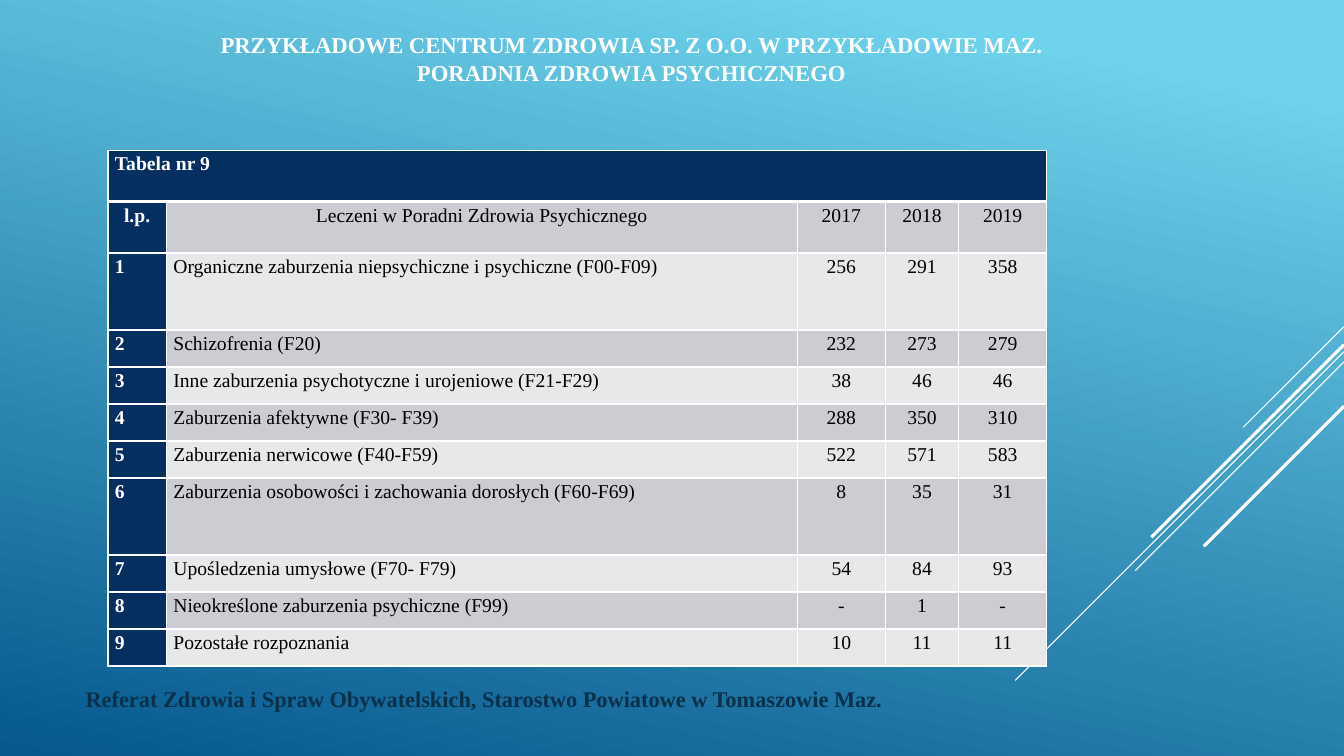
from dataclasses import dataclass
from itertools import product

from lxml import etree
from pptx import Presentation
from pptx import util as u
from pptx.dml.color import RGBColor
from pptx.enum import shapes, text
from pptx.oxml import ns

SLIDE_WIDTH = u.Inches(13.33)
SLIDE_HEIGHT = u.Inches(7.5)


@dataclass(frozen=True)
class Theme:
    font: str = "Times New Roman"
    sky: str = "6ED2EB"
    sea: str = "06588E"
    white: str = "FFFFFF"
    black: str = "000000"
    navy: str = "052F61"
    footer: str = "0A304A"
    dark_band: str = "CCCDD2"
    light_band: str = "E7E8EA"
    title_size: float = 16.2
    footer_size: float = 16
    table_size: float = 14
    border: float = 1
    header_border: float = 3


@dataclass(frozen=True)
class Ray:
    start: float
    run: float
    weight: float


@dataclass(frozen=True)
class Caption:
    wording: str
    left: float
    top: float
    width: float
    height: float
    margin_top: float
    size: float
    color: str
    align: text.PP_ALIGN


THEME = Theme()
LEFT, CENTER = text.PP_ALIGN.LEFT, text.PP_ALIGN.CENTER

RAYS = [
    Ray(43.2, 7.5, 0.75),
    Ray(46.53, 24.46, 0.75),
    Ray(47.87, 15.53, 0.75),
    Ray(45.6, 14.33, 2.25),
    Ray(53.73, 10.43, 2.25),
]

CAPTIONS = [
    Caption(
        "PRZYKŁADOWE CENTRUM ZDROWIA SP. Z O.O. W PRZYKŁADOWIE MAZ.\v"
        "PORADNIA ZDROWIA PSYCHICZNEGO",
        9.38, 3.73, 75.17, 15.07, 0.4, THEME.title_size, THEME.white, CENTER,
    ),
    Caption(
        "Referat Zdrowia i Spraw Obywatelskich, Starostwo Powiatowe w Tomaszowie Maz.",
        5.63, 90, 61.89, 5.33, 0.67, THEME.footer_size, THEME.footer, LEFT,
    ),
]

TABLE_LEFT, TABLE_TOP = 8.03, 19.87
COLUMN_WIDTHS = [4.35, 46.96, 6.53, 5.48, 6.53]
HEADER_ROW, TALL_ROW, PLAIN_ROW = 6.8, 10.18, 4.9
TALL_ROWS = {2, 7}
TABLE_TITLE = "Tabela nr 9"
HEADINGS = ["l.p.", "Leczeni w Poradni Zdrowia Psychicznego", "2017", "2018", "2019"]
DIAGNOSES = [
    ("Organiczne zaburzenia niepsychiczne i psychiczne (F00-F09)", "256", "291", "358"),
    ("Schizofrenia (F20)", "232", "273", "279"),
    ("Inne zaburzenia psychotyczne i urojeniowe (F21-F29)", "38", "46", "46"),
    ("Zaburzenia afektywne (F30- F39)", "288", "350", "310"),
    ("Zaburzenia nerwicowe (F40-F59)", "522", "571", "583"),
    ("Zaburzenia osobowości i zachowania dorosłych (F60-F69)", "8", "35", "31"),
    ("Upośledzenia umysłowe (F70- F79)", "54", "84", "93"),
    ("Nieokreślone zaburzenia psychiczne (F99)", "-", "1", "-"),
    ("Pozostałe rozpoznania", "10", "11", "11"),
]


def across(share: float) -> int:
    return round(SLIDE_WIDTH * share / 100)


def down(share: float) -> int:
    return round(SLIDE_HEIGHT * share / 100)


def rgb(color: str) -> RGBColor:
    return RGBColor.from_string(color)


def style_paragraph(paragraph, size: float, color: str, bold: bool, align) -> None:
    paragraph.alignment = align
    paragraph.font.name = THEME.font
    paragraph.font.size = u.Pt(size)
    paragraph.font.bold = bold
    paragraph.font.color.rgb = rgb(color)


def paint_background(slide) -> None:
    fill = slide.background.fill
    fill.gradient()
    fill.gradient_angle = 258
    for stop, position, color in zip(
        fill.gradient_stops, (0.1, 1), (THEME.sky, THEME.sea)
    ):
        stop.position = position
        stop.color.rgb = rgb(color)


def draw_ray(slide, ray: Ray) -> None:
    run = across(ray.run)
    connector = slide.shapes.add_connector(
        shapes.MSO_CONNECTOR.STRAIGHT,
        SLIDE_WIDTH, down(ray.start), SLIDE_WIDTH - run, down(ray.start) + run,
    )
    connector.line.color.rgb = rgb(THEME.white)
    connector.line.width = u.Pt(ray.weight)
    etree.SubElement(connector._element.spPr, ns.qn("a:effectLst"))


def draw_caption(slide, caption: Caption) -> None:
    box = slide.shapes.add_textbox(
        across(caption.left), down(caption.top),
        across(caption.width), down(caption.height),
    )
    frame = box.text_frame
    frame.word_wrap = True
    frame.margin_top = down(caption.margin_top)
    paragraph = frame.paragraphs[0]
    paragraph.text = caption.wording
    style_paragraph(paragraph, caption.size, caption.color, True, caption.align)


def set_border(cell, side: str, weight: float) -> None:
    properties = cell._tc.get_or_add_tcPr()
    line = etree.SubElement(properties, ns.qn(f"a:ln{side}"), w=str(u.Pt(weight)))
    fill = etree.SubElement(line, ns.qn("a:solidFill"))
    etree.SubElement(fill, ns.qn("a:srgbClr"), val=THEME.white)


def style_cell(cell, row: int, column: int) -> None:
    heavy_side = {0: "B", 1: "T"}.get(row)
    for side in "LRTB":
        set_border(cell, side, THEME.header_border if side == heavy_side else THEME.border)
    navy = row == 0 or column == 0
    band = THEME.dark_band if row % 2 else THEME.light_band
    cell.fill.solid()
    cell.fill.fore_color.rgb = rgb(THEME.navy if navy else band)
    cell.margin_left = cell.margin_right = u.Inches(0.07)
    cell.margin_top = cell.margin_bottom = 0
    paragraph = cell.text_frame.paragraphs[0]
    paragraph.line_spacing = 1.15
    paragraph.space_after = u.Pt(8)
    centered = row == 1 or (row > 1 and column > 1)
    style_paragraph(
        paragraph, THEME.table_size, THEME.white if navy else THEME.black,
        navy, CENTER if centered else LEFT,
    )


def draw_table(slide) -> None:
    rows = [[TABLE_TITLE], HEADINGS]
    rows += [[str(number), *entry] for number, entry in enumerate(DIAGNOSES, 1)]
    heights = [
        HEADER_ROW if row < 2 else TALL_ROW if row in TALL_ROWS else PLAIN_ROW
        for row in range(len(rows))
    ]
    table = slide.shapes.add_table(
        len(rows), len(COLUMN_WIDTHS), across(TABLE_LEFT), down(TABLE_TOP),
        across(sum(COLUMN_WIDTHS)), down(sum(heights)),
    ).table
    table.first_row = table.horz_banding = False
    for column, width in zip(table.columns, COLUMN_WIDTHS):
        column.width = across(width)
    for row, height in zip(table.rows, heights):
        row.height = down(height)
    for row, wordings in enumerate(rows):
        for column, wording in enumerate(wordings):
            table.cell(row, column).text = wording
    for row, column in product(range(len(rows)), range(len(COLUMN_WIDTHS))):
        style_cell(table.cell(row, column), row, column)
    table.cell(0, 0).merge(table.cell(0, len(COLUMN_WIDTHS) - 1))


def main() -> None:
    presentation = Presentation()
    presentation.slide_width = SLIDE_WIDTH
    presentation.slide_height = SLIDE_HEIGHT
    slide = presentation.slides.add_slide(presentation.slide_layouts[6])
    paint_background(slide)
    for ray in RAYS:
        draw_ray(slide, ray)
    for caption in CAPTIONS:
        draw_caption(slide, caption)
    draw_table(slide)
    presentation.save("out.pptx")


if __name__ == "__main__":
    main()
